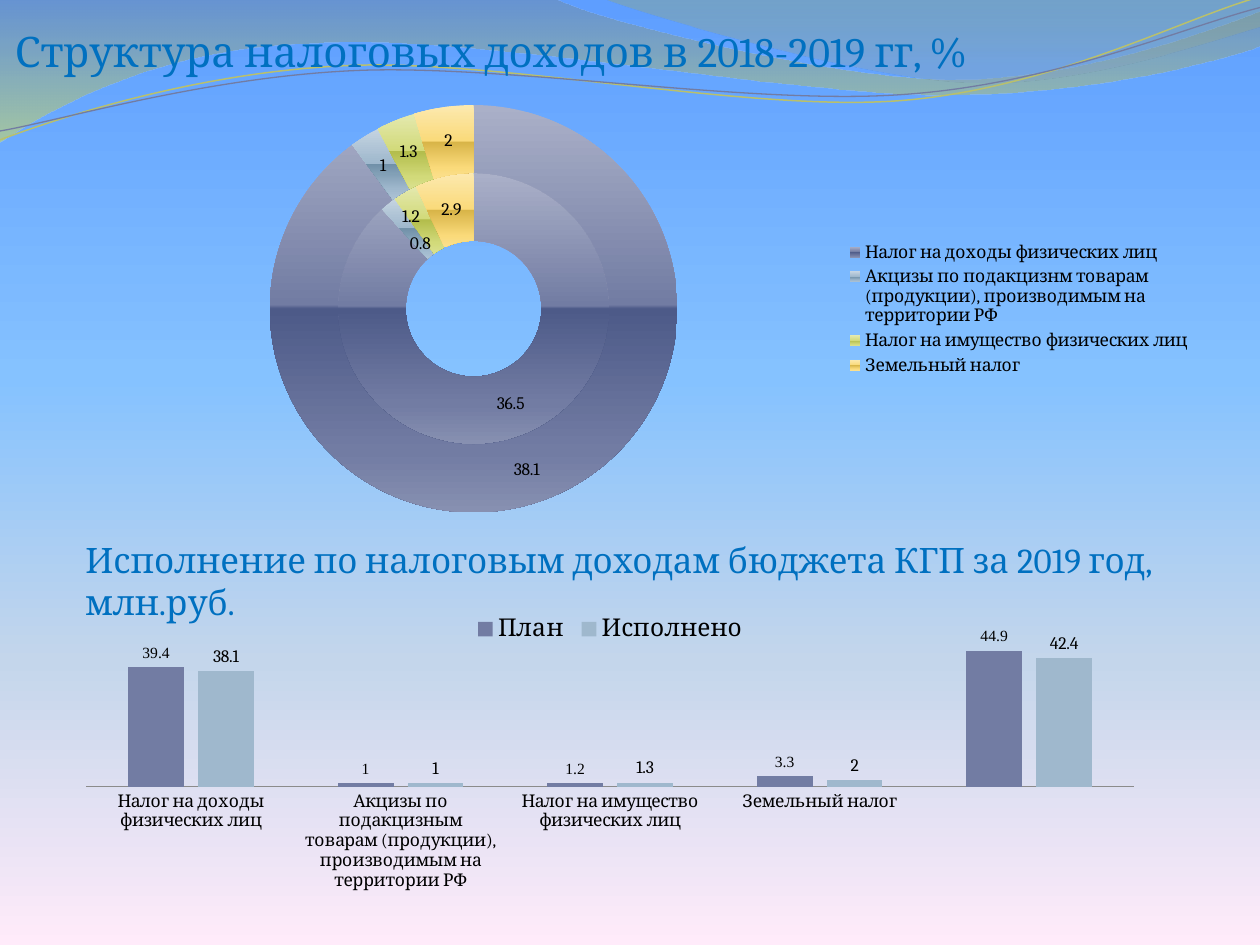
from copy import deepcopy
from math import cos, radians, sin

from lxml.etree import SubElement
from pptx import Presentation
from pptx.chart.data import CategoryChartData
from pptx.dml.color import RGBColor
from pptx.enum.chart import XL_CHART_TYPE, XL_LABEL_POSITION, XL_LEGEND_POSITION, XL_TICK_MARK
from pptx.enum.text import MSO_ANCHOR, PP_ALIGN
from pptx.oxml import parse_xml
from pptx.oxml.ns import nsdecls, qn
from pptx.util import Cm, Pt


def color(value):
    return RGBColor.from_string(value)


def write_text(box, text, size, anchor=MSO_ANCHOR.TOP, margins=(0.25, 0.13, 0.25, 0.13)):
    frame = box.text_frame
    frame.word_wrap = True
    frame.vertical_anchor = anchor
    frame.margin_left, frame.margin_top, frame.margin_right, frame.margin_bottom = map(Cm, margins)
    para = frame.paragraphs[0]
    para.alignment = PP_ALIGN.LEFT
    span = para.add_run()
    span.text = text
    span.font.size = Pt(size)
    span.font.name = "Cambria"
    span.font.color.rgb = color("0070C0")
    outline = parse_xml(f'<a:ln {nsdecls("a")} w="9525"><a:solidFill><a:srgbClr val="8B8B9D"/></a:solidFill></a:ln>')
    span.font._element.insert(0, outline)


deck = Presentation()
deck.slide_width, deck.slide_height = Cm(25.4), Cm(19.05)
page = deck.slides.add_slide(deck.slide_layouts[5])

gradients = [(page.background.fill, [
    (0, "5E9EFF", 0, 100), (40, "85C2FF", 0, 100), (70, "C4D6EB", 0, 100), (100, "FFEBFA", 0, 100)])]

waves = [
    ([(0, 0), (4.4, -0.01), (4.76, 0.17, 6.64, 0.63, 7.58, 0.63), (8.53, 0.63, 9.58, 0.26, 10, 0.09),
      (10.01, 0.36), (9.83, 0.44, 8.7, 0.76, 7.46, 0.75), (6.22, 0.75, 3.82, 0.28, 2.57, 0.34),
      (1.29, 0.36, 0.46, 0.83, -0.01, 1.13), (0, 0)],
     [(0, "72889B", 0, 45), (100, "D3DE57", 0, 55)], None, 0, None),
    ([(4.79, -0.01), (5.09, 0.11, 6.82, 0.62, 7.69, 0.65), (8.56, 0.69, 9.61, 0.32, 10, 0.21), (10, 0),
      (4.79, -0.01)],
     [(0, "A4AC50", 0, 30), (80, "84A3BD", 0, 45)], None, 0, None),
    ([(0, 1.11), (0.48, 0.93, 1.58, 0.57, 2.77, 0.52), (3.95, 0.47, 5.93, 0.89, 7.13, 0.8),
      (8.33, 0.71, 9.38, 0.15, 9.98, -0.02)], None, "B9C06C", 0.85, (4.99, 0.575)),
    ([(0, 1.04), (0.47, 0.96, 1.64, 0.61, 2.83, 0.56), (4.03, 0.51, 5.97, 0.84, 7.17, 0.75),
      (8.36, 0.67, 9.41, 0.21, 10, 0.06)], None, "727CA3", 0.75, (5, 0.59)),
]
unit = Cm(2.54)
tilt = radians(2.7)
for segments, stops, line_color, line_width, center in waves:
    curves = []
    for segment in segments:
        points = list(zip(segment[::2], segment[1::2]))
        if center:
            offsets = [(x - center[0], y - center[1]) for x, y in points]
            points = [(center[0] + x * cos(tilt) - y * sin(tilt), center[1] + x * sin(tilt) + y * cos(tilt))
                      for x, y in offsets]
        curves.append([(round(x * unit), round(y * unit)) for x, y in points])
    builder = page.shapes.build_freeform(*curves[0][0])
    builder.add_line_segments([points[-1] for points in curves[1:]], close=stops is not None)
    wave = builder.convert_to_shape()
    outline = wave._element.find(".//" + qn("a:path"))
    for node, points in zip(list(outline)[1:], curves[1:]):
        if len(points) == 3:
            bend = SubElement(outline, qn("a:cubicBezTo"))
            for x, y in points:
                SubElement(bend, qn("a:pt"), x=str(x - wave.left), y=str(y - wave.top))
            outline.replace(node, bend)
    wave.shadow.inherit = False
    if stops:
        wave.line.fill.background()
        gradients.append((wave.fill, stops))
    else:
        wave.rotation = 357.3
        wave.fill.background()
        wave.line.color.rgb = color(line_color)
        wave.line.width = Pt(line_width)

title = page.shapes.title
title.left, title.top, title.width, title.height = Cm(0.3), Cm(0.33), Cm(24.2), Cm(1.2)
write_text(title, "Структура налоговых доходов в 2018-2019 гг, %", 24,
           anchor=MSO_ANCHOR.BOTTOM, margins=(0, 0.13, 0, 0))
page.shapes._spTree.append(title._element)

subtitle = page.shapes.add_textbox(Cm(1.47), Cm(10.72), Cm(23.01), Cm(1.96))
write_text(subtitle, "Исполнение по налоговым доходам бюджета КГП за 2019 год, млн.руб.", 20)

income, estate, land = "Налог на доходы физических лиц", "Налог на имущество физических лиц", "Земельный налог"
structure_data = CategoryChartData()
structure_data.categories = [
    income, "Акцизы по подакцизнм товарам (продукции), производимым на территории РФ", estate, land]
structure_data.add_series("Series 1", (36.5, 0.8, 1.2, 2.9))
structure_data.add_series("Series 2", (38.1, 1, 1.3, 2))
execution_data = CategoryChartData()
execution_data.categories = [
    income, "Акцизы по подакцизным товарам (продукции), производимым на территории РФ", estate, land, ""]
execution_data.add_series("План", (39.4, 1, 1.2, 3.3, 44.9))
execution_data.add_series("Исполнено", (38.1, 1, 1.3, 2, 42.4))

structure = page.shapes.add_chart(
    XL_CHART_TYPE.DOUGHNUT, Cm(2.11), Cm(1.73), Cm(22.2), Cm(8.99), structure_data).chart
execution = page.shapes.add_chart(
    XL_CHART_TYPE.COLUMN_CLUSTERED, Cm(1.3), Cm(11.73), Cm(22), Cm(6.35), execution_data).chart

for chart, legend_place, legend_size in (
        (structure, XL_LEGEND_POSITION.RIGHT, 10), (execution, XL_LEGEND_POSITION.TOP, 14)):
    chart.has_title = False
    chart.font.size = Pt(10)
    chart.font.name = "Cambria"
    chart.font.color.rgb = color("000000")
    chart.has_legend = True
    chart.legend.position = legend_place
    chart.legend.include_in_layout = False
    chart.legend.font.size = Pt(legend_size)
    for series in chart.plots[0].series:
        series.data_labels.show_value = True

palette = [("727CA3", "4D5A88"), ("9FB8CD", "7090A8"), ("D2DA7A", "B3BD4C"), ("FADA7A", "D8B448")]
for series in structure.plots[0].series:
    for index, (base, dark) in enumerate(palette):
        gradients.append((series.points[index].format.fill, [
            (0, base, 0.4, 100), (49, base, 0, 100), (50, dark, 0, 100),
            (85, base, 0, 100), (100, base, 0.15, 100)]))

columns = execution.plots[0]
columns.vary_by_categories = False
columns.gap_width = 150
columns.overlap = -25
for series, (base, dark) in zip(columns.series, palette):
    series.format.fill.solid()
    series.format.fill.fore_color.rgb = color(base)
    series.data_labels.position = XL_LABEL_POSITION.OUTSIDE_END
    labels = series._element.find(qn("c:cat")).findall(".//" + qn("c:pt"))
    labels[-1].getparent().remove(labels[-1])
plan_font = columns.series[0].data_labels.font
plan_font.size = Pt(8.9)
plan_font.name = "Times New Roman"
execution.value_axis.visible = False
execution.value_axis.has_major_gridlines = False
execution.value_axis.minimum_scale = 0
execution.value_axis.maximum_scale = 50
execution.category_axis.major_tick_mark = XL_TICK_MARK.NONE
execution.category_axis.format.line.color.rgb = color("8B8B8B")

for fill, stops in gradients:
    fill.gradient()
    fill.gradient_angle = 270
    stop_list = fill._fill._gradFill.gsLst
    for extra in stops[2:]:
        stop_list.append(deepcopy(stop_list[0]))
    for stop, node, (position, base, brightness, alpha) in zip(fill.gradient_stops, stop_list, stops):
        stop.position = position / 100
        stop.color.rgb = color(base)
        if brightness:
            stop.color.brightness = brightness
        if alpha < 100:
            SubElement(node[0], qn("a:alpha"), val=str(alpha * 1000))

inner_points = structure.plots[0].series[0].points
layouts = [
    (structure._chartSpace.chart.plotArea, 0, "inner", (0.15, 0.04, 0.37, 0.92)),
    (structure.legend._element, 1, None, (0.67, 0.34, 0.32, 0.32)),
    (execution._chartSpace.chart.plotArea, 0, "inner", (0.02, 0.17, 0.96, 0.48)),
    (execution.legend._element, 1, None, (0.37, 0.1, 0.26, 0.1)),
    (inner_points[1].data_label._get_or_add_dLbl(), 1, None, (0.01, 0.03)),
    (inner_points[2].data_label._get_or_add_dLbl(), 1, None, (-0.01, -0.01)),
]
for parent, index, target, numbers in layouts:
    for old in parent.findall(qn("c:layout")):
        parent.remove(old)
    layout = parse_xml(f'<c:layout {nsdecls("c")}><c:manualLayout/></c:layout>')
    parent.insert(index, layout)
    if target:
        SubElement(layout[0], qn("c:layoutTarget"), val=target)
    if len(numbers) == 4:
        for mode in ("xMode", "yMode"):
            SubElement(layout[0], qn(f"c:{mode}"), val="edge")
    for name, number in zip("xywh", numbers):
        SubElement(layout[0], qn(f"c:{name}"), val=str(number))

deck.save("out.pptx")
